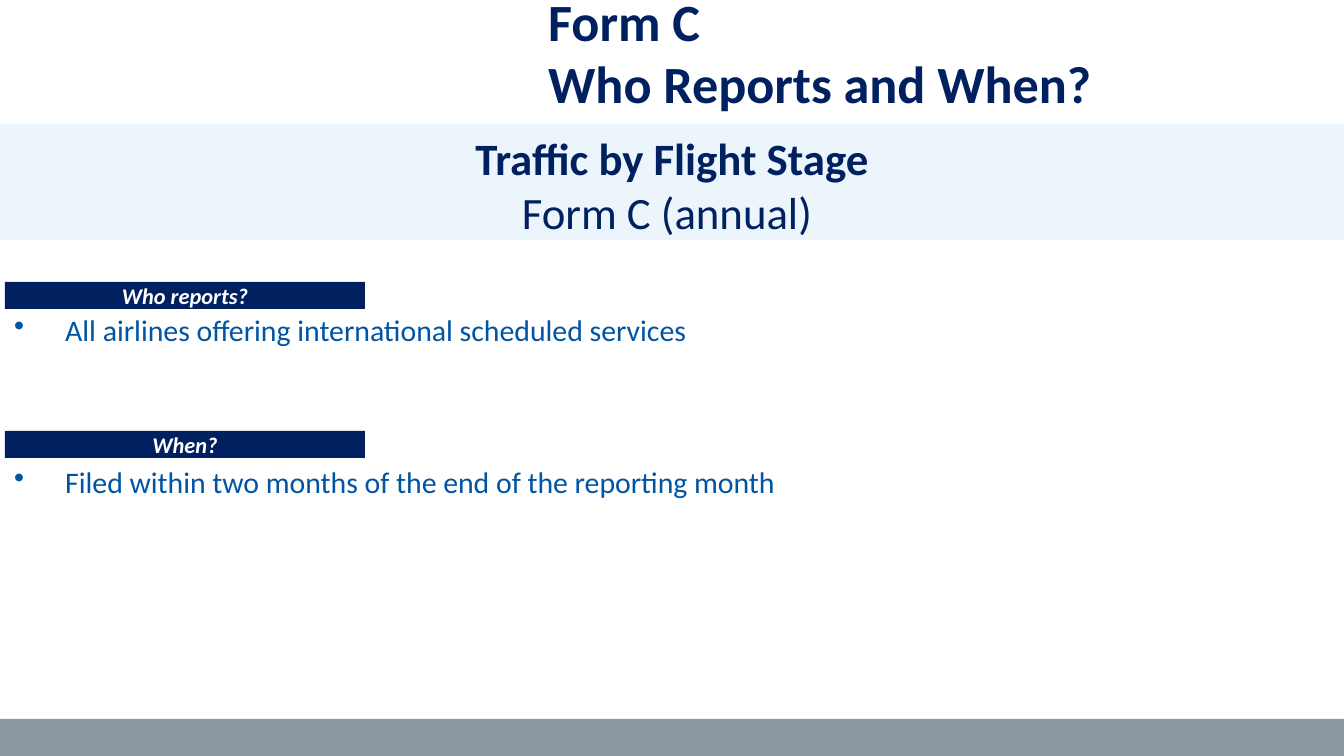
import pptx
import pptx.util
import pptx.dml.color
import pptx.enum.shapes
import pptx.enum.text
from lxml import etree

# Content
HEADING = ["Form C", "Who Reports and When?"]
FORM_NAME = "Traffic by Flight Stage"
FORM_PERIOD = "Form C (annual) "
LABELS = [("Who reports?", 282), ("When?", 431)]  # text, top in px
ANSWERS = [
    ("All airlines offering international scheduled services", 0),
    ("Filed within two months of the end of the reporting month", 64),
]  # text, space before in pt

NAVY, BLUE, PALE, GREY, WHITE = "002060", "0054A4", "ECF5FC", "8C99A1", "FFFFFF"
WIDTH, HEIGHT = 1344, 756
EMU_PER_PX = 914400 / 134.4
ALIGN = pptx.enum.text.PP_ALIGN
ANCHOR = pptx.enum.text.MSO_ANCHOR


def px(length):
    return pptx.util.Emu(round(length * EMU_PER_PX))


def colour(hex_string):
    return pptx.dml.color.RGBColor.from_string(hex_string)


def style(paragraph, size, hex_string, bold=False, italic=False):
    font = paragraph.font
    font.name, font.size = "Calibri", pptx.util.Pt(size)
    font.bold, font.italic = bold, italic
    font.color.rgb = colour(hex_string)


def add_bar(slide, box, fill, anchor=ANCHOR.MIDDLE):
    bar = slide.shapes.add_shape(
        pptx.enum.shapes.MSO_SHAPE.RECTANGLE, *map(px, box))
    bar.shadow.inherit = False
    bar.fill.solid()
    bar.fill.fore_color.rgb = colour(fill)
    bar.line.fill.background()
    bar.text_frame.vertical_anchor = anchor
    return bar.text_frame


def add_text(slide, box, anchor):
    frame = slide.shapes.add_textbox(*map(px, box)).text_frame
    frame.word_wrap = True
    frame.vertical_anchor = anchor
    return frame


def add_bullet(paragraph, indent):
    properties = paragraph._p.get_or_add_pPr()
    properties.set("marL", str(px(indent)))
    properties.set("indent", str(-px(indent)))
    bullet = etree.SubElement(properties, pptx.oxml.ns.qn("a:buChar"))
    bullet.set("char", "•")


deck = pptx.Presentation()
deck.slide_width, deck.slide_height = px(WIDTH), px(HEIGHT)
slide = deck.slides.add_slide(deck.slide_layouts[6])

# Footer bar
add_bar(slide, (0, 719, WIDTH, HEIGHT - 719), GREY)

# Form title band
title = add_bar(slide, (0, 124, WIDTH, 116), PALE, ANCHOR.TOP).paragraphs[0]
title.alignment = ALIGN.CENTER
style(title, 24, NAVY, bold=True)
title.add_run().text = FORM_NAME
title.add_line_break()
period = title.add_run()
period.text = FORM_PERIOD
period.font.bold = False

# Answers
answers = add_text(slide, (1, 309, 1328, 429), ANCHOR.TOP)
for index, (answer, space) in enumerate(ANSWERS):
    paragraph = answers.add_paragraph() if index else answers.paragraphs[0]
    paragraph.text = answer
    paragraph.line_spacing = 0.9
    paragraph.space_before = pptx.util.Pt(space)
    add_bullet(paragraph, 51)
    style(paragraph, 16, BLUE)

# Page heading
heading = add_text(slide, (535, -5, 809, 113), ANCHOR.MIDDLE)
heading.text = "\n".join(HEADING)
for paragraph in heading.paragraphs:
    style(paragraph, 28, NAVY, bold=True)

# Question labels
for label, top in LABELS:
    frame = add_bar(slide, (5, top, 360, 27), NAVY)
    frame.margin_top = frame.margin_bottom = 0
    frame.text = label
    frame.paragraphs[0].alignment = ALIGN.CENTER
    style(frame.paragraphs[0], 12, WHITE, bold=True, italic=True)

deck.save("out.pptx")
